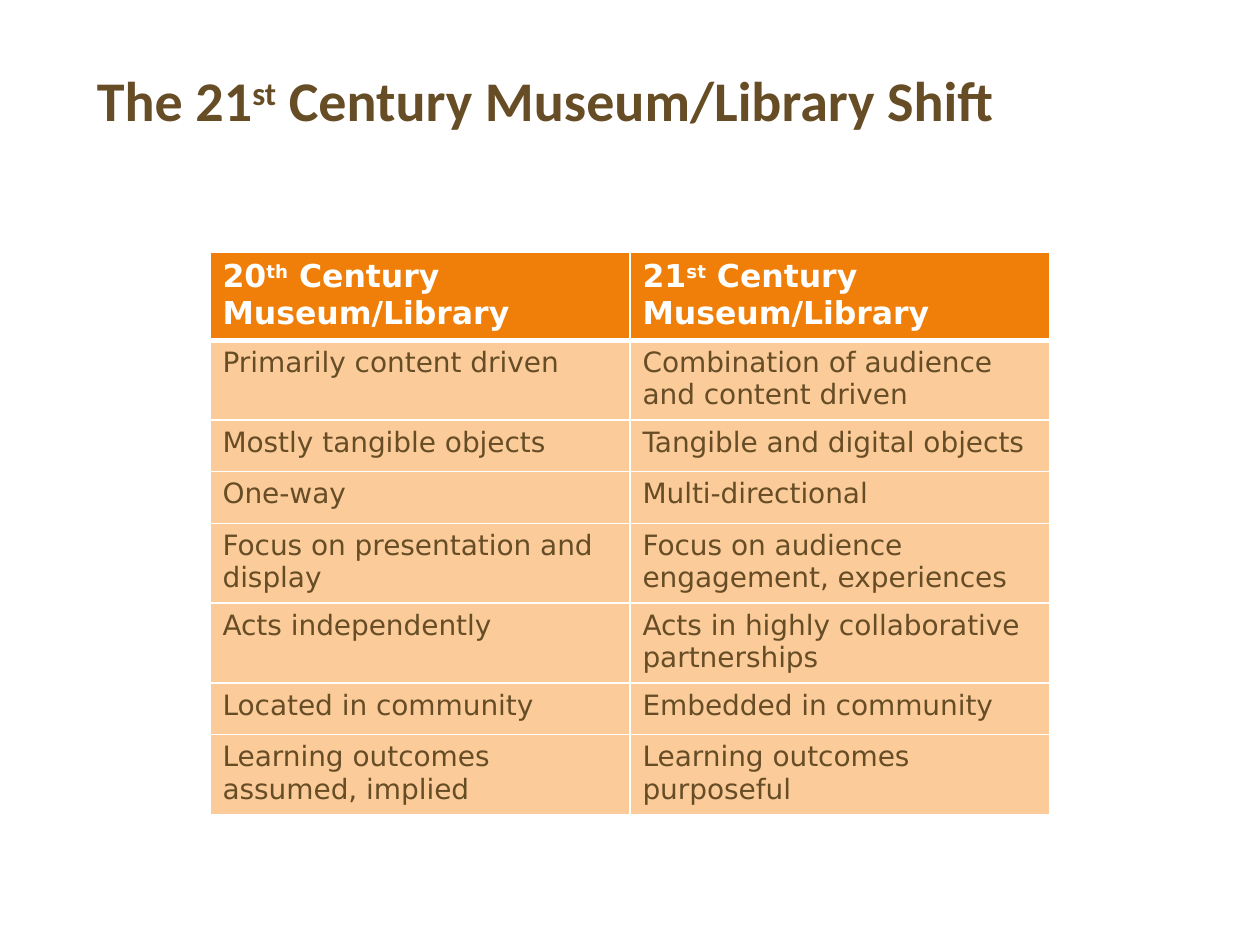
import pptx
import pptx.dml.color
import pptx.enum.text
import pptx.oxml
import pptx.oxml.ns
import pptx.util

COLORS = {"brown": "674D26", "orange": "F07F09", "peach": "FBCC9A", "white": "FFFFFF"}
TITLE = ("The 21", "st", " Century Museum/Library Shift")
HEADER = [
    ("20", "th", " Century Museum/Library"),
    ("21", "st", " Century Museum/Library"),
]
ROWS = [
    ("Primarily content driven", "Combination of audience and content driven"),
    ("Mostly tangible objects", "Tangible and digital objects"),
    ("One-way", "Multi-directional"),
    ("Focus on presentation and display", "Focus on audience engagement, experiences"),
    ("Acts independently", "Acts in highly collaborative partnerships"),
    ("Located in community", "Embedded in community"),
    ("Learning outcomes assumed, implied", "Learning outcomes purposeful"),
]
ROW_H = 0.41


def rgb(name):
    return pptx.dml.color.RGBColor.from_string(COLORS[name])


def write(tf, parts, font, size, color, bold):
    p = tf.paragraphs[0]
    for i, text in enumerate(parts):
        r = p.add_run()
        r.text = text
        if i == 1:
            r._r.get_or_add_rPr().set("baseline", "30000")
    p.font.name, p.font.size, p.font.bold = font, pptx.util.Pt(size), bold
    p.font.color.rgb = rgb(color)


def border(cell, widths):
    tcPr = cell._tc.get_or_add_tcPr()
    for i, (side, width) in enumerate(widths.items()):
        tcPr.insert(i, pptx.oxml.parse_xml(
            f'<a:ln{side} {pptx.oxml.ns.nsdecls("a")} w="{pptx.util.Pt(width)}">'
            f'<a:solidFill><a:srgbClr val="{COLORS["white"]}"/></a:solidFill></a:ln{side}>'))


prs = pptx.Presentation()
prs.slide_width, prs.slide_height = pptx.util.Inches(10), pptx.util.Inches(7.5)
W = prs.slide_width
s = prs.slides.add_slide(prs.slide_layouts[6])

sp = s.shapes.add_textbox(*map(pptx.util.Inches, (0.67, 0.25, 8.92, 1.08)))
tf = sp.text_frame
tf.word_wrap = True
tf.vertical_anchor = pptx.enum.text.MSO_ANCHOR.MIDDLE
write(tf, TITLE, "Calibri", 32, "brown", True)

cells = [HEADER] + [[(text,) for text in row] for row in ROWS]
table = s.shapes.add_table(
    len(cells), len(HEADER), W // 6, pptx.util.Inches(2),
    W * 2 // 3, pptx.util.Inches(ROW_H * len(cells))).table
for i, row in enumerate(cells):
    table.rows[i].height = pptx.util.Inches(ROW_H)
    head = i == 0
    for j, parts in enumerate(row):
        cell = table.cell(i, j)
        cell.fill.solid()
        cell.fill.fore_color.rgb = rgb("orange" if head else "peach")
        border(cell, {"L": 1, "R": 1, "T": 3 if i == 1 else 1, "B": 3 if head else 1})
        write(cell.text_frame, parts, "DejaVu Sans", 18 if head else 16,
              "white" if head else "brown", head)

prs.save("out.pptx")
